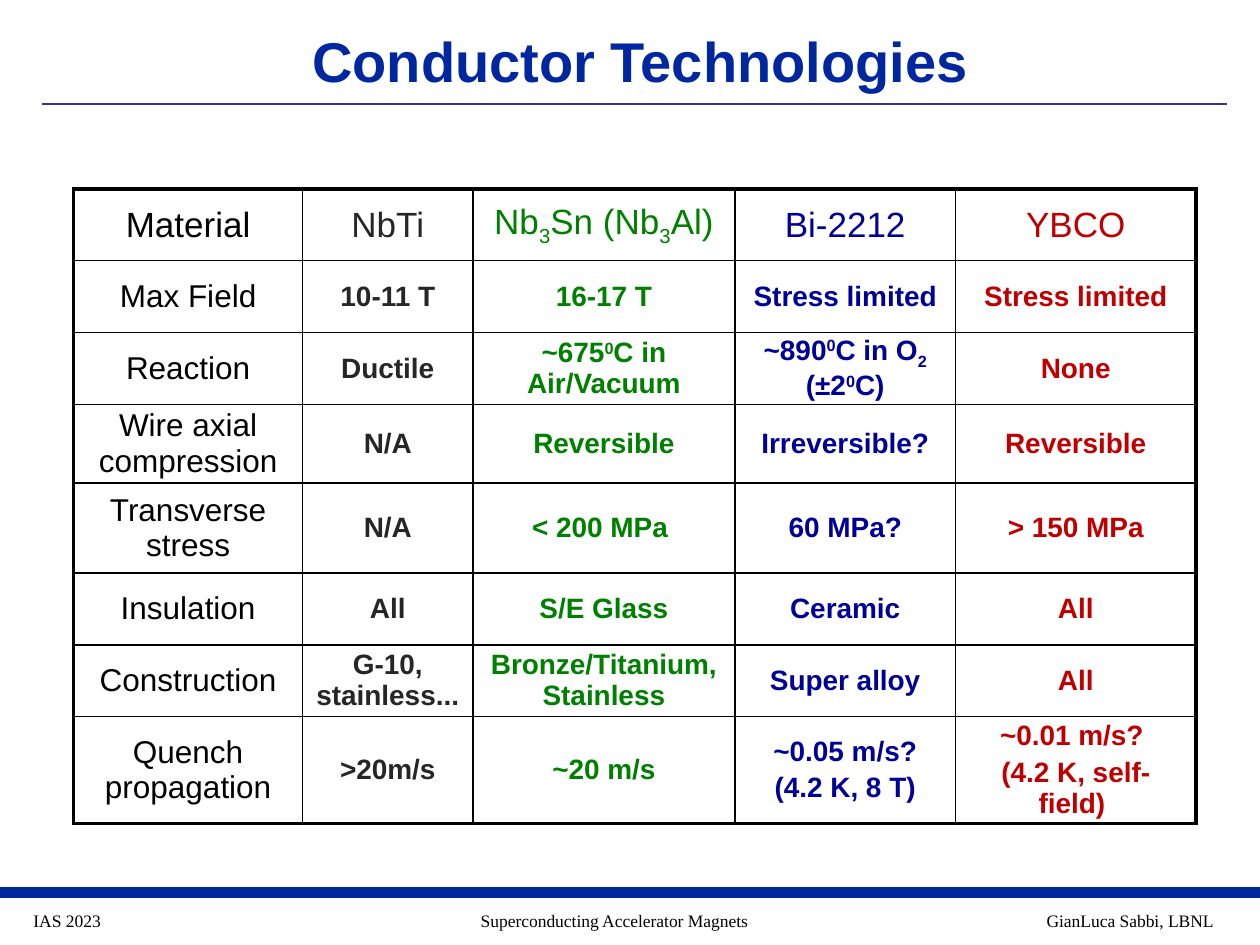
from pptx import Presentation
from pptx.dml.color import RGBColor
from pptx.enum.shapes import MSO_CONNECTOR
from pptx.enum.text import MSO_ANCHOR, PP_ALIGN
from pptx.oxml.ns import qn
from pptx.util import Pt
from lxml.etree import SubElement

COLORS = {
    "title": "00279F", "rule": "333399", "black": "000000", "nbti": "262626",
    "nb3sn": "008000", "bi2212": "000099", "ybco": "C00000",
}
COLUMN_COLORS = ["black", "nbti", "nb3sn", "bi2212", "ybco"]
COLUMN_WIDTHS = [131, 97.2, 149.8, 126, 137.5]
ROW_HEIGHTS = [41, 41, 41, 45, 51.5, 41, 41, 61]
BASELINES = {"_": "-25000", "^": "30000"}

# "_" lowers and "^" raises the next character; a newline starts a paragraph.
ROWS = [
    ["Material", "NbTi", "Nb_3Sn (Nb_3Al)", "Bi-2212", "YBCO"],
    ["Max Field", "10-11 T", "16-17 T", "Stress limited", "Stress limited"],
    ["Reaction", "Ductile", "~675^0C in Air/Vacuum", "~890^0C in O_2 (±2^0C)", "None"],
    ["Wire axial compression", "N/A", "Reversible", "Irreversible?", "Reversible"],
    ["Transverse stress", "N/A", "< 200 MPa ", "60 MPa?", "> 150 MPa"],
    ["Insulation", "All", "S/E Glass", "Ceramic", "All"],
    ["Construction", "G-10, stainless... ", "Bronze/Titanium, Stainless", "Super alloy", "All"],
    ["Quench propagation", ">20m/s", "~20 m/s", "~0.05 m/s?\n (4.2 K, 8 T) ",
     "~0.01 m/s? \n(4.2 K, self-field) "],
]


def rgb(name):
    return RGBColor.from_string(COLORS[name])


def set_font(p, size, color, name="Arial", bold=False):
    p.font.size, p.font.name, p.font.bold = Pt(size), name, bold
    p.font.color.rgb = rgb(color)


def add_line(s, x1, x2, y, color, width):
    line = s.shapes.add_connector(MSO_CONNECTOR.STRAIGHT, Pt(x1), Pt(y), Pt(x2), Pt(y))
    line.line.color.rgb = rgb(color)
    line.line.width = Pt(width)
    SubElement(line._element.spPr, qn("a:effectLst"))


def add_text(s, x, y, w, h, text, align, anchor=MSO_ANCHOR.TOP):
    tf = s.shapes.add_textbox(Pt(x), Pt(y), Pt(w), Pt(h)).text_frame
    tf.word_wrap = True
    tf.vertical_anchor = anchor
    p = tf.paragraphs[0]
    p.text, p.alignment = text, align
    return p


def add_title(s, x, y, w, h):
    p = add_text(s, x, y, w, h, "Conductor Technologies", PP_ALIGN.CENTER, MSO_ANCHOR.MIDDLE)
    p.line_spacing = 0.85
    set_font(p, 32, "title", bold=True)
    add_line(s, x - 54, x + w + 47, y + h + 0.5, "rule", 1.25)


def add_footer(s, x, y, w):
    add_line(s, x + w, x, y, "title", 6)
    for left, width, text, align in [
        (12, 223, "IAS 2023", PP_ALIGN.LEFT),
        (223, 256, "Superconducting Accelerator Magnets", PP_ALIGN.CENTER),
        (564, 136.5, "GianLuca Sabbi, LBNL", PP_ALIGN.RIGHT),
    ]:
        p = add_text(s, x + left, y + 6.5, width, 19.5, text, align)
        set_font(p, 10, "black", "Times New Roman")


def add_marked_runs(p, text):
    """Split the text into runs at its raised and lowered characters."""
    plain = ""
    chars = iter(text)
    for char in chars:
        if char not in BASELINES:
            plain += char
            continue
        p.add_run().text = plain
        r = p.add_run()
        r.text = next(chars)
        r._r.get_or_add_rPr().set("baseline", BASELINES[char])
        plain = ""
    if plain:
        p.add_run().text = plain


def set_borders(cell, outer):
    """Draw all four sides, thicker where the side is in outer."""
    tc_pr = cell._tc.get_or_add_tcPr()
    for side in "LRTB":
        width = Pt(2.25 if side in outer else 1)
        ln = SubElement(tc_pr, qn("a:ln" + side), w=str(width))
        fill = SubElement(ln, qn("a:solidFill"))
        SubElement(fill, qn("a:srgbClr"), val=COLORS["black"])


def fill_cell(cell, text, size, color, bold):
    cell.fill.background()
    cell.vertical_anchor = MSO_ANCHOR.MIDDLE
    cell.margin_left = cell.margin_right = Pt(7.2)
    cell.margin_top = cell.margin_bottom = 0
    tf = cell.text_frame
    for i, part in enumerate(text.split("\n")):
        p = tf.add_paragraph() if i else tf.paragraphs[0]
        p.alignment = PP_ALIGN.CENTER
        if i:
            p.space_before = Pt(0.2 * size)
        add_marked_runs(p, part)
        set_font(p, size, color, bold=bold)


def add_conductor_table(s, x, y):
    table = s.shapes.add_table(
        len(ROWS), len(COLUMN_WIDTHS), Pt(x), Pt(y),
        Pt(sum(COLUMN_WIDTHS)), Pt(sum(ROW_HEIGHTS))).table
    table.first_row = table.horz_banding = False
    for column, width in zip(table.columns, COLUMN_WIDTHS):
        column.width = Pt(width)
    for row, height in zip(table.rows, ROW_HEIGHTS):
        row.height = Pt(height)
    last_row, last_col = len(ROWS) - 1, len(COLUMN_WIDTHS) - 1
    for i, row in enumerate(ROWS):
        for j, text in enumerate(row):
            cell = table.cell(i, j)
            edges = {"L": j == 0, "R": j == last_col, "T": i == 0, "B": i == last_row}
            set_borders(cell, [side for side, is_outer in edges.items() if is_outer])
            size = 20 if i == 0 else 18 if j == 0 else 16
            fill_cell(cell, text, size, COLUMN_COLORS[j], bold=i > 0 and j > 0)


def main():
    prs = Presentation()
    prs.slide_width, prs.slide_height = Pt(720), Pt(540)
    s = prs.slides.add_slide(prs.slide_layouts[6])
    add_footer(s, 0, 510, 720)
    add_title(s, 78, 16, 576, 43)
    add_conductor_table(s, 42, 108)
    prs.save("out.pptx")


if __name__ == "__main__":
    main()
